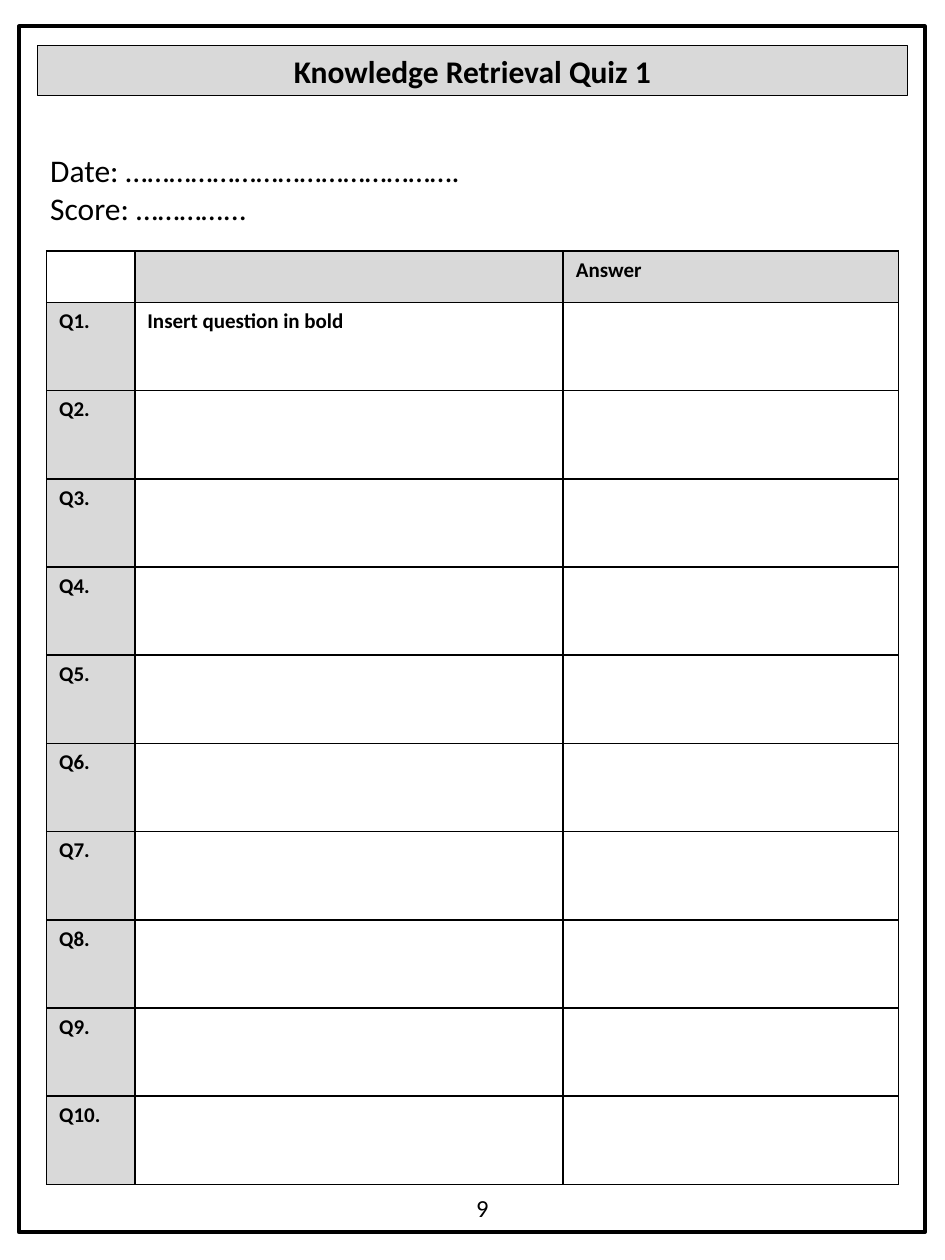
from lxml import etree
from pptx import Presentation
from pptx.dml.color import RGBColor
from pptx.enum.shapes import MSO_SHAPE
from pptx.enum.text import MSO_ANCHOR, PP_ALIGN
from pptx.oxml.ns import qn
from pptx.util import Inches, Pt

RECTANGLE = MSO_SHAPE.RECTANGLE
MIDDLE = MSO_ANCHOR.MIDDLE
LEFT, CENTER = PP_ALIGN.LEFT, PP_ALIGN.CENTER
BLACK = RGBColor(0x00, 0x00, 0x00)
WHITE = RGBColor(0xFF, 0xFF, 0xFF)
GREY = RGBColor(0xD9, 0xD9, 0xD9)

TITLE = "Knowledge Retrieval Quiz 1"
DETAILS = ["Date: ……………………………………….", "Score: …………..."]
PAGE_NUMBER = "9"
HEADER = ["", "", "Answer"]
QUESTIONS = ["Insert question in bold"] + [""] * 9
ROWS = [HEADER] + [[f"Q{n}.", question, ""] for n, question in enumerate(QUESTIONS, 1)]

COLUMN_WIDTHS = [0.7, 3.4, 2.66]
HEADER_HEIGHT, QUESTION_HEIGHT = 0.41, 0.7


def box(left, top, width, height):
    return [Inches(length) for length in (left, top, width, height)]


def write(frame, *lines, size=18, bold=False, align=LEFT):
    for index, line in enumerate(lines):
        paragraph = frame.paragraphs[0] if index == 0 else frame.add_paragraph()
        paragraph.alignment = align
        run = paragraph.add_run()
        run.text = line
        run.font.name = "Calibri"
        run.font.size = Pt(size)
        run.font.bold = bold
        run.font.color.rgb = BLACK


def add_text(slide, place, *lines, **text_format):
    frame = slide.shapes.add_textbox(*box(*place)).text_frame
    frame.word_wrap = True
    write(frame, *lines, **text_format)


def outline(shape, width):
    shape.line.color.rgb = BLACK
    shape.line.width = Pt(width)


def add_borders(cell):
    properties = cell._tc.get_or_add_tcPr()
    for side in ("a:lnL", "a:lnR", "a:lnT", "a:lnB"):
        border = etree.SubElement(properties, qn(side), w=str(Pt(1)))
        fill = etree.SubElement(border, qn("a:solidFill"))
        etree.SubElement(fill, qn("a:srgbClr"), val=str(BLACK))


def add_quiz_table(slide, left, top):
    heights = [HEADER_HEIGHT] + [QUESTION_HEIGHT] * len(QUESTIONS)
    place = box(left, top, sum(COLUMN_WIDTHS), sum(heights))
    table = slide.shapes.add_table(len(heights), len(COLUMN_WIDTHS), *place).table
    table.first_row = table.horz_banding = False
    for column, width in zip(table.columns, COLUMN_WIDTHS):
        column.width = Inches(width)
    for row, height in zip(table.rows, heights):
        row.height = Inches(height)
    for r, texts in enumerate(ROWS):
        for c, text in enumerate(texts):
            cell = table.cell(r, c)
            add_borders(cell)
            cell.fill.solid()
            is_heading = (r == 0) != (c == 0)
            cell.fill.fore_color.rgb = GREY if is_heading else WHITE
            if text:
                write(cell.text_frame, text, size=12, bold=True)


def main():
    deck = Presentation()
    deck.slide_width, deck.slide_height = Inches(7.5), Inches(10)
    slide = deck.slides.add_slide(deck.slide_layouts[5])

    banner = slide.shapes.title
    banner.left, banner.top, banner.width, banner.height = box(0.3, 0.36, 6.9, 0.4)
    banner.fill.solid()
    banner.fill.fore_color.rgb = GREY
    outline(banner, 0.75)
    banner.text_frame.vertical_anchor = MIDDLE
    write(banner.text_frame, TITLE, bold=True, align=CENTER)

    page_frame = slide.shapes.add_shape(RECTANGLE, *box(0.15, 0.21, 7.19, 9.57))
    page_frame.shadow.inherit = False
    page_frame.fill.background()
    outline(page_frame, 2.25)

    add_text(slide, (0.3, 1.15, 5.15, 0.71), *DETAILS)
    add_quiz_table(slide, 0.37, 1.99)
    add_text(slide, (3.68, 9.42, 0.53, 0.34), PAGE_NUMBER, size=14)
    deck.save("out.pptx")


if __name__ == "__main__":
    main()
